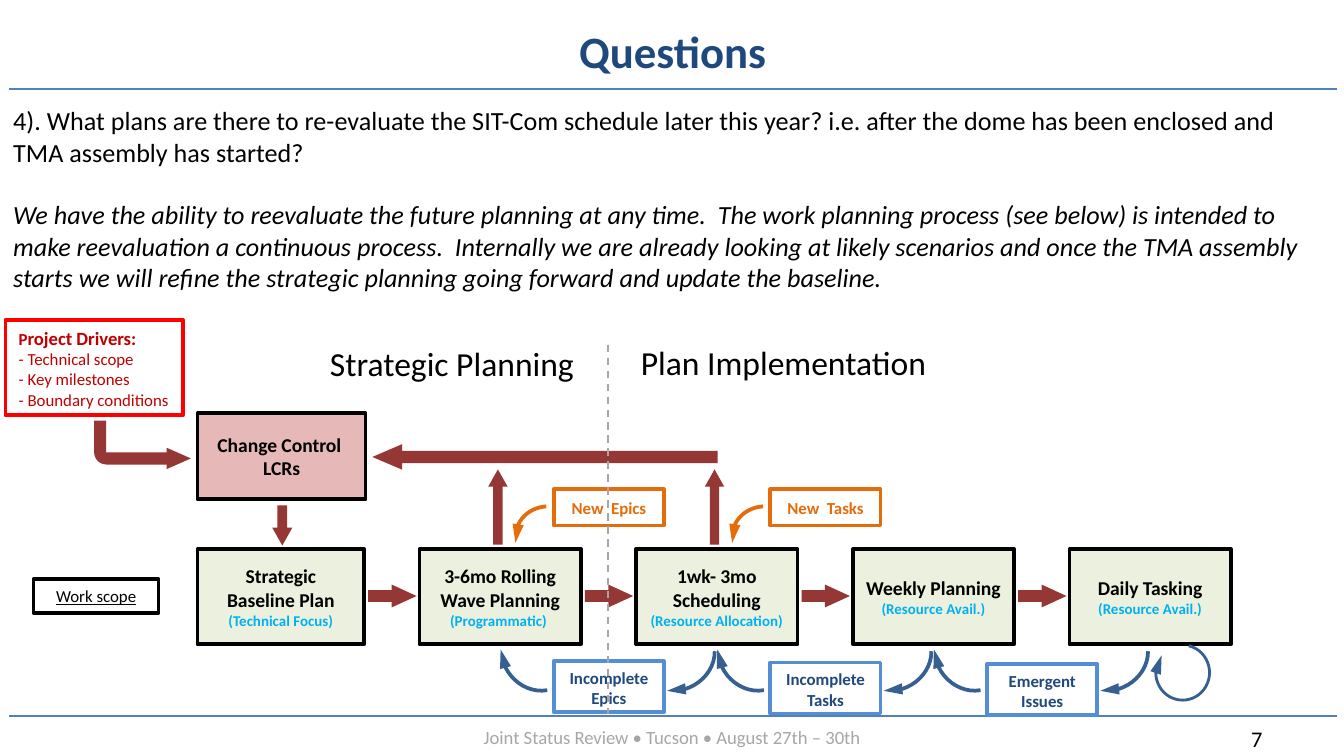
from dataclasses import dataclass

from pptx import Presentation
from pptx.dml.color import RGBColor
from pptx.enum.dml import MSO_LINE
from pptx.enum.shapes import MSO_CONNECTOR, MSO_SHAPE
from pptx.enum.text import MSO_ANCHOR, PP_ALIGN
from pptx.oxml.ns import qn
from pptx.util import Inches, Pt
from lxml import etree

RECT, ARROW = MSO_SHAPE.RECTANGLE, MSO_SHAPE.RIGHT_ARROW
BENT, ARC = MSO_SHAPE.BENT_ARROW, MSO_SHAPE.ARC
LINE, DASH = MSO_CONNECTOR.STRAIGHT, MSO_LINE.DASH
LEFT, MID, RIGHT = PP_ALIGN.LEFT, PP_ALIGN.CENTER, PP_ALIGN.RIGHT
TOP, CENTRE = MSO_ANCHOR.TOP, MSO_ANCHOR.MIDDLE

CELL = 0.1     # grid cell in inches: 100 columns across the slide
STEP = 16.12   # columns from one stage to the next


@dataclass(frozen=True)
class Theme:
    font: str = "Calibri"
    black: str = "000000"
    navy: str = "1F497D"
    rule: str = "4F81BD"
    grey: str = "A6A6A6"
    red: str = "FF0000"
    wine: str = "C00000"
    stage: str = "EBF1DE"
    change: str = "E6B9B8"
    flow: str = "953735"
    sky: str = "00B0F0"
    note: str = "558ED5"
    loop: str = "376092"
    orange: str = "E46C0A"
    title: float = 24
    head: float = 18
    body: float = 14
    page: float = 12
    label: float = 10.5
    foot: float = 10
    small: float = 9
    tiny: float = 8


@dataclass(frozen=True)
class Box:
    x: float
    y: float
    w: float
    h: float

    def sub(self, x, y, w, h):
        """Box offset in cells from this one's top left corner."""
        return Box(self.x + x, self.y + y, w, h)

    def frame(self):
        return [Inches(n * CELL) for n in (self.x, self.y, self.w, self.h)]


T = Theme()


def rgb(code):
    return RGBColor.from_string(code)


def run(text, size, color=T.black, **marks):
    return text, size, color, marks


def write(shape, paras, align=MID, anchor=CENTRE, inset=0.1, wrap=True):
    """Fill a shape with paragraphs, each a list of runs."""
    frame = shape.text_frame
    frame.word_wrap = wrap
    frame.vertical_anchor = anchor
    frame.margin_left = frame.margin_right = Inches(inset)
    for i, runs in enumerate(paras):
        para = frame.paragraphs[0] if i == 0 else frame.add_paragraph()
        para.alignment = align
        for text, size, color, marks in runs:
            part = para.add_run()
            part.text = text
            font = part.font
            font.name, font.size = T.font, Pt(size)
            font.color.rgb = rgb(color)
            for mark, value in marks.items():
                setattr(font, mark, value)
    return frame


def label(slide, box, paras, align=MID, anchor=TOP, wrap=True):
    return write(slide.shapes.add_textbox(*box.frame()), paras, align, anchor, wrap=wrap)


def draw(slide, kind, box, fill=None, line=None, width=2, turn=0, adj=()):
    shape = slide.shapes.add_shape(kind, *box.frame())
    shape.shadow.inherit = False
    shape.rotation = turn
    for i, value in enumerate(adj):
        shape.adjustments[i] = value
    for paint, color in ((shape.fill, fill), (shape.line.fill, line)):
        if color:
            paint.solid()
            paint.fore_color.rgb = rgb(color)
        else:
            paint.background()
    if line:
        shape.line.width = Pt(width)
    return shape


def flip(shape, way):
    shape._element.spPr.find(qn("a:xfrm")).set(way, "1")


def curve(slide, box, color, turn=0, adj=(169.7, 16.24), width=2):
    """Arc with a long arrowhead at its end."""
    arc = draw(slide, ARC, box, line=color, width=width, turn=turn, adj=adj)
    ln = arc._element.spPr.find(qn("a:ln"))
    etree.SubElement(ln, qn("a:tailEnd"), type="triangle", len="lg")
    return arc


def rule(slide, box, color, dash=None):
    x, y, w, h = box.frame()
    line = slide.shapes.add_connector(LINE, x, y, x + w, y + h)
    line.line.color.rgb = rgb(color)
    line.line.width = Pt(1)
    if dash:
        line.line.dash_style = dash
    etree.SubElement(line._element.spPr, qn("a:effectLst"))


def header(slide, box):
    rule(slide, box.sub(0, box.h, box.w, 0), T.rule)
    label(slide, box.sub(18.5, 0, 61.7, 4.6),
          [[run("Questions", T.title, T.navy, bold=True)]], anchor=CENTRE)


def footer(slide, box):
    rule(slide, box.sub(0, 0, box.w, 0), T.rule)
    label(slide, box.sub(91.4, 0.2, 6.2, 3), [[run("7", T.page)]], LEFT)
    label(slide, box.sub(4.3, 0.2, 90, 2.7),
          [[run("Joint Status Review • Tucson • August 27th – 30th", T.foot, T.grey)]])


def answer(slide, box):
    ask = ("4). What plans are there to re-evaluate the SIT-Com schedule later this year? "
           "i.e. after the dome has been enclosed and TMA assembly has started?")
    reply = ("We have the ability to reevaluate the future planning at any time.  The work "
             "planning process (see below) is intended to make reevaluation a continuous "
             "process.  Internally we are already looking at likely scenarios and once the "
             "TMA assembly starts we will refine the strategic planning going forward and "
             "update the baseline.")
    frame = label(slide, box, [[run(ask, T.body)], [run(reply, T.body, italic=True)]], LEFT)
    frame.paragraphs[1].space_before = Pt(16.8)


def drivers(slide, box):
    items = ("- Technical scope", "- Key milestones", "- Boundary conditions")
    first = [run("P", T.small, T.wine, bold=True),
             run("roject Drivers:", T.foot, T.wine, bold=True)]
    write(draw(slide, RECT, box.sub(0, 0, box.w, 7.1), line=T.red),
          [first] + [[run(item, T.small, T.wine)] for item in items], LEFT, TOP)
    bend = draw(slide, BENT, box.sub(6.6, 7.5, 7.2, 3.6), T.flow, turn=180,
                adj=(0.25, 0.22, 0.5, 0.25))
    flip(bend, "flipH")
    write(draw(slide, RECT, box.sub(2.1, 19.3, 9.3, 2.5), line=T.black),
          [[run("Work scope", T.small, underline=True)]])


def stages(slide, box):
    """Row of planning stages joined by arrows."""
    steps = (("Strategic Baseline Plan", "(Technical Focus)", 12.4),
             ("3-6mo Rolling Wave Planning", "(Programmatic) ", 12),
             ("1wk- 3mo Scheduling", "(Resource Allocation)", 12),
             ("Weekly Planning", "(Resource Avail.)", 12),
             ("Daily Tasking", "(Resource Avail.)", 12))
    for i, (name, focus, width) in enumerate(steps):
        end = 12.4 + STEP * i
        write(draw(slide, RECT, box.sub(end - width, 0, width, box.h), T.stage, T.black),
              [[run(name, T.label, bold=True)], [run(focus, T.tiny, T.sky, bold=True)]],
              inset=0.09)
        if i < len(steps) - 1:
            draw(slide, ARROW, box.sub(end + 0.3, 2.65, 3.6, 1.7), T.flow, adj=(0.52, 1.09))


def changes(slide, box):
    """Change control with the arrows and new work that feed it."""
    write(draw(slide, RECT, box.sub(0, 0, 12.5, 6.4), T.change, T.black),
          [[run(text, T.label, bold=True)] for text in ("Change Control ", "LCRs")])
    draw(slide, ARROW, box.sub(4.8, 7.6, 3, 1.5), T.flow, turn=90, adj=(0.48, 0.89))
    draw(slide, ARROW, box.sub(13, 2.3, 25.7, 1.9), T.flow, turn=180, adj=(0.48, 1.17))
    for i, name in enumerate(("New  Epics", "New  Tasks")):
        x = STEP * i
        draw(slide, ARROW, box.sub(19.55 + x, 6.25, 5.6, 1.45), T.flow, turn=270,
             adj=(0.48, 0.89))
        write(draw(slide, RECT, box.sub(26.5 + x, 5.65, 8.2, 2.7), line=T.orange),
              [[run(name, T.small, T.orange, bold=True)]])
        arc = curve(slide, box.sub(23.6 + x, 6.95, 5.2, 4.9), T.orange, 202.9,
                    (179.29, 17.08))
        flip(arc, "flipV")


def returns(slide, box):
    """Unfinished work sent back to the stage before."""
    for i, name in enumerate(("Incomplete Epics", "Incomplete Tasks", "Emergent Issues")):
        x = STEP * i
        write(draw(slide, RECT, box.sub(3.9 + x, 3.9 + 0.1 * i, 8.2, 3.8), line=T.note),
              [[run(name, T.small, T.navy, bold=True)]], anchor=TOP)
        curve(slide, box.sub(x, 0.05, 5.5, 6.1), T.loop, 154.4)
        curve(slide, box.sub(10.1 + x, 0.3, 5.5, 6.1), T.loop, 73.6)
    curve(slide, box.sub(48.7, 2.7, 4, 4.1), T.loop, adj=(169.7, 131.54), width=1.5)


def phases(slide, box):
    """Phase names on each side of a dashed divider."""
    label(slide, box.sub(0, 0, 20.4, 4), [[run("Strategic Planning", T.head)]], RIGHT, wrap=False)
    label(slide, box.sub(23.4, -0.1, 23.5, 4), [[run("Plan Implementation", T.head)]], LEFT,
          wrap=False)
    rule(slide, box.sub(21.95, 0.6, 0, box.h), T.grey, DASH)


def main():
    deck = Presentation()
    deck.slide_width = Inches(10)
    deck.slide_height = deck.slide_width * 9 // 16
    slide = deck.slides.add_slide(deck.slide_layouts[6])
    footer(slide, Box(0.7, 53.3, 98.8, 2.9))
    header(slide, Box(0.7, 1.5, 98.8, 5.1))
    answer(slide, Box(0, 7.3, 100, 15.1))
    drivers(slide, Box(0.4, 23.8, 13.2, 21.8))
    stages(slide, Box(14.7, 40.85, 76.9, 7.1))
    changes(slide, Box(14.7, 30.75, 50.8, 10.2))
    returns(slide, Box(37.3, 45.3, 52.7, 7.9))
    phases(slide, Box(23.3, 25.05, 46.9, 27.5))
    deck.save("out.pptx")


if __name__ == "__main__":
    main()
